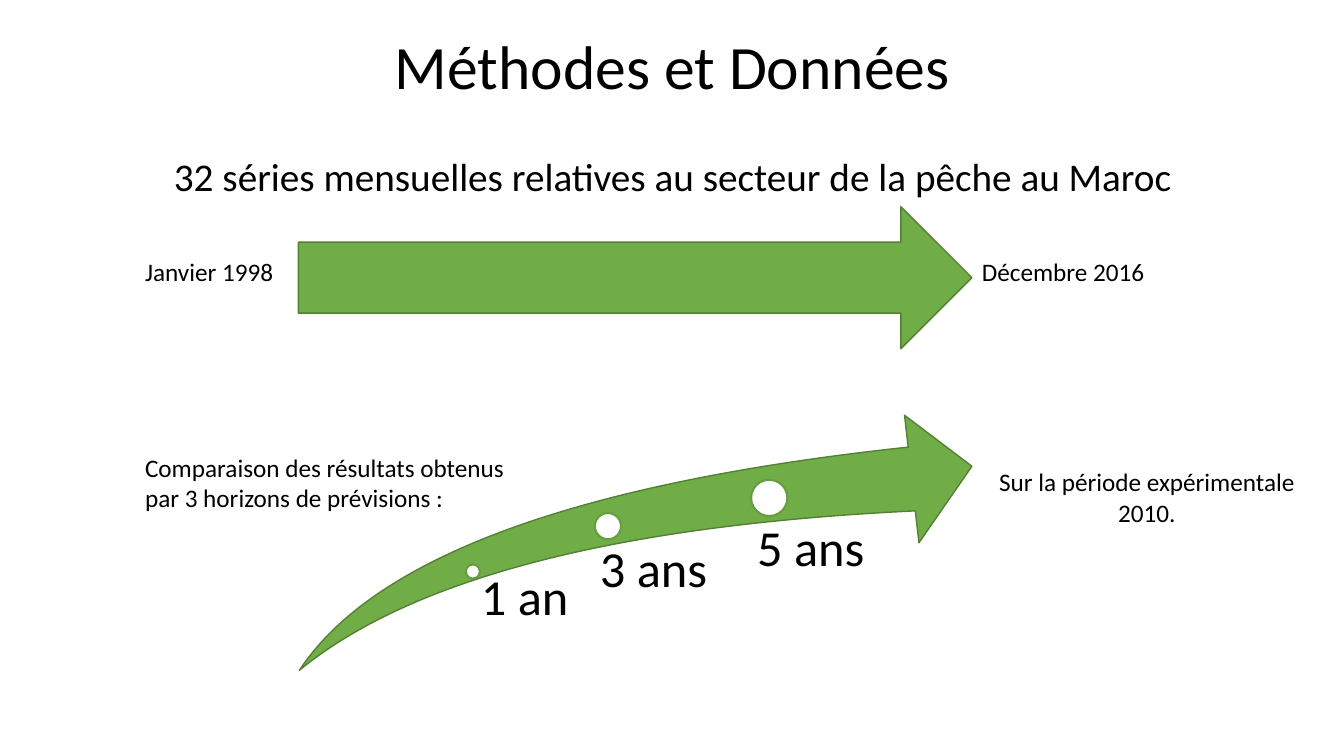
from pptx import Presentation
from pptx.dml.color import RGBColor
from pptx.enum.shapes import MSO_SHAPE as Shape
from pptx.enum.text import MSO_ANCHOR as Anchor, MSO_AUTO_SIZE as AutoSize, PP_ALIGN as Align
from pptx.util import Inches, Pt

BLACK = RGBColor(0x00, 0x00, 0x00)
WHITE = RGBColor(0xFF, 0xFF, 0xFF)
GREEN = RGBColor(0x70, 0xAD, 0x47)
DARK_GREEN = RGBColor(0x53, 0x80, 0x35)
DOT_GREEN = RGBColor(0x66, 0x9D, 0x40)

HORIZONS = [
    ("1 an", (4.62, 5.6), 0.14, (4.69, 5.67, 1.28, 0.99), 0.08),
    ("3 ans", (5.9, 5.09), 0.26, (5.81, 5.4, 1.72, 1.49), 0.14),
    ("5 ans", (7.45, 4.76), 0.36, (7.32, 5.19, 1.87, 1.7), 0.19),
]


def add_text(page, text, place, size=18, align=Align.LEFT, anchor=Anchor.TOP,
             spacing=1.0, insets=(0.1, 0.05, 0.1, 0.05), grow=False):
    box = page.shapes.add_textbox(*map(Inches, place))
    frame = box.text_frame
    frame.word_wrap = True
    frame.auto_size = AutoSize.SHAPE_TO_FIT_TEXT if grow else AutoSize.NONE
    frame.vertical_anchor = anchor
    (frame.margin_left, frame.margin_top,
     frame.margin_right, frame.margin_bottom) = map(Inches, insets)
    para = frame.paragraphs[0]
    para.alignment = align
    para.line_spacing = spacing
    span = para.add_run()
    span.text = text
    span.font.name = "Calibri"
    span.font.size = Pt(size)
    span.font.color.rgb = BLACK


def add_figure(page, kind, place, fill=GREEN, line=DARK_GREEN, width=1):
    figure = page.shapes.add_shape(kind, *map(Inches, place))
    figure.shadow.inherit = False
    figure.fill.solid()
    figure.fill.fore_color.rgb = fill
    figure.line.color.rgb = line
    figure.line.width = Pt(width)
    return figure


def add_horizon(page, label, corner, diameter, place, indent):
    add_figure(page, Shape.OVAL, (*corner, diameter, diameter),
               fill=WHITE, line=DOT_GREEN, width=1.5)
    add_text(page, label, place, size=36, spacing=0.9, insets=(indent, 0, 0, 0))


def main():
    deck = Presentation()
    deck.slide_width = Inches(13.33)
    deck.slide_height = Inches(7.5)
    page = deck.slides.add_slide(deck.slide_layouts[6])

    add_text(page, "Méthodes et Données", (0.92, 0.3, 11.5, 0.78), size=44,
             align=Align.CENTER, anchor=Anchor.MIDDLE, spacing=0.9)
    add_text(page, "32 séries mensuelles relatives au secteur de la pêche au Maroc",
             (0.92, 1.51, 11.5, 0.6), size=28, align=Align.CENTER, spacing=0.9)

    add_figure(page, Shape.RIGHT_ARROW, (2.96, 2.05, 6.68, 1.41))
    add_text(page, "Janvier 1998", (1.34, 2.49, 1.62, 0.4), grow=True)
    add_text(page, "Décembre 2016", (9.64, 2.49, 1.97, 0.4), grow=True)

    swoosh = add_figure(page, Shape.SWOOSH_ARROW, (2.97, 4.12, 6.67, 2.53))
    swoosh.adjustments[0] = 0.25
    swoosh.adjustments[1] = 0.25
    for horizon in HORIZONS:
        add_horizon(page, *horizon)

    add_text(page, "Comparaison des résultats obtenus par 3 horizons de prévisions :",
             (1.34, 4.44, 3.95, 0.7), grow=True)
    add_text(page, "Sur la période expérimentale 2010.", (9.78, 4.58, 3.19, 0.71),
             align=Align.CENTER, grow=True)

    deck.save("out.pptx")


if __name__ == "__main__":
    main()
